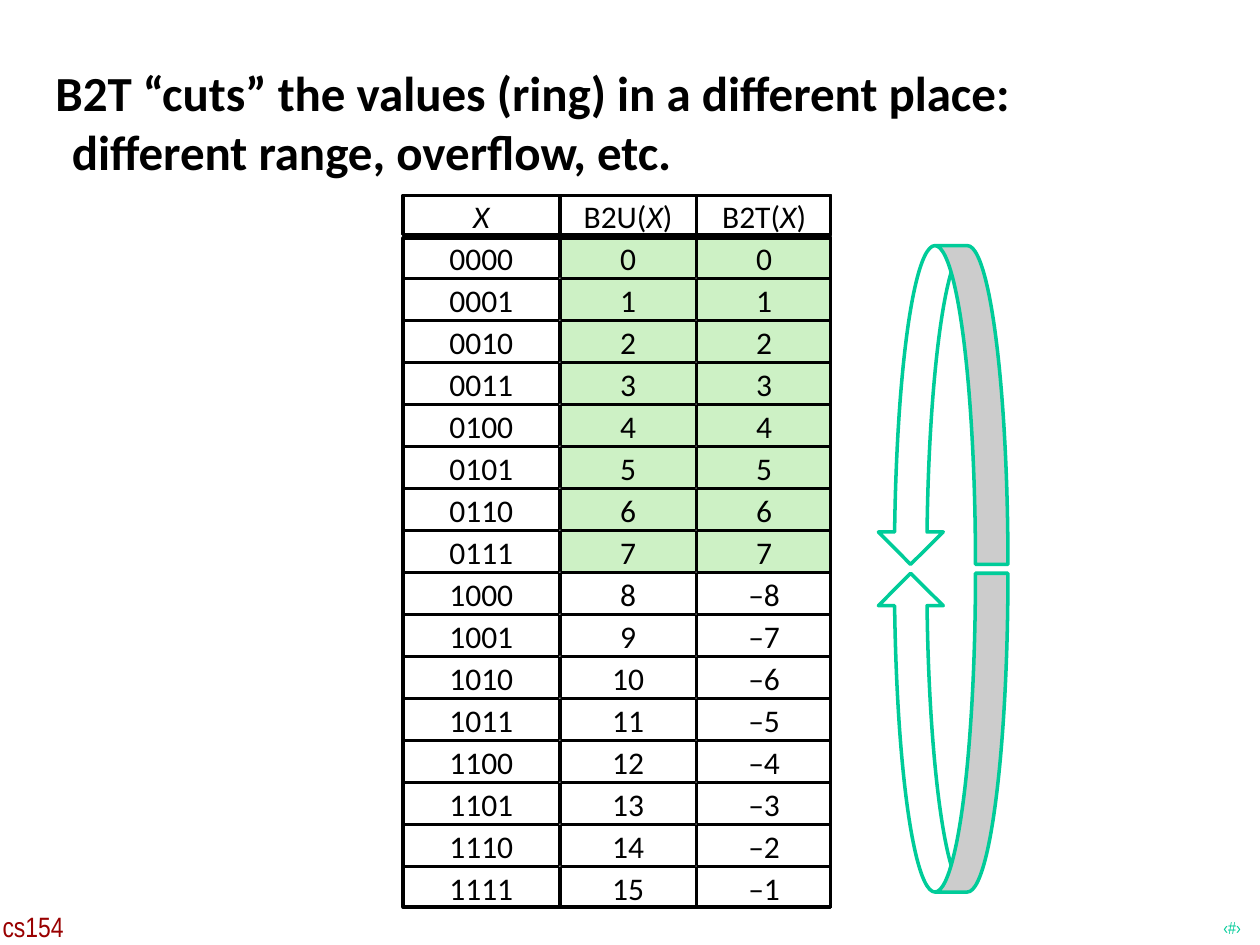
from pptx import Presentation
from pptx.dml.color import RGBColor
from pptx.enum.shapes import MSO_SHAPE
from pptx.enum.text import MSO_ANCHOR, PP_ALIGN
from pptx.util import Inches, Pt

ARROW = MSO_SHAPE.CURVED_UP_ARROW
RECT = MSO_SHAPE.RECTANGLE
MIDDLE = MSO_ANCHOR.MIDDLE
TOP = MSO_ANCHOR.TOP
CENTER = PP_ALIGN.CENTER

TITLE = "B2T “cuts” the values (ring) in a different place: different range, overflow, etc."
HEADS = ["X", "B2U(X)", "B2T(X)"]
BITS = 4
SIZE = 2 ** BITS
HALF = SIZE // 2

TEXTS = [
    ("‹#›", (9.66, 7.23, 0.25, 0.25), "Arial Narrow", 10, "00CC99", False, TOP),
    ("cs154", (-0.03, 7.17, 0.61, 0.37), "Arial Narrow", 16, "990000", False, TOP),
    (TITLE, (0.39, 0.12, 8.3, 1.69), "Calibri", 28, "000000", True, MIDDLE),
]
COLS = [(3.2, 1.24), (4.45, 1.07), (5.53, 1.07)]
START = 1.55
PITCH = 1 / 3
TALL = 0.32
FRAMES = [(3.2, 1.55, 3.39, 0.31), (3.2, 1.89, 3.39, 5.31)]
ARROWS = [(4.55, ("flipH",)), (1.95, ("flipH", "flipV"))]


def color(code):
    return RGBColor.from_string(code)


def style(font, name, size, code):
    font.name = name
    font.size = Pt(size)
    font.color.rgb = color(code)


def add_shape(shapes, kind, box, fill, line, width):
    shape = shapes.add_shape(kind, *map(Inches, box))
    shape.shadow.inherit = False
    if fill:
        shape.fill.solid()
        shape.fill.fore_color.rgb = color(fill)
    else:
        shape.fill.background()
    shape.line.color.rgb = color(line)
    shape.line.width = Pt(width)
    return shape


def add_text(slide, text, box, name, size, code, bold, anchor):
    frame = slide.shapes.add_textbox(*map(Inches, box)).text_frame
    frame.margin_left = frame.margin_right = Inches(0.05)
    frame.margin_top = frame.margin_bottom = Inches(0.05)
    frame.word_wrap = text == TITLE
    frame.vertical_anchor = anchor
    frame.text = text
    para = frame.paragraphs[0]
    if text == TITLE:
        props = para._p.get_or_add_pPr()
        props.set("marL", str(Inches(0.13)))
        props.set("indent", str(-Inches(0.13)))
    font = para.runs[0].font
    style(font, name, size, code)
    font.bold = bold


def add_cell(shapes, text, box, fill):
    frame = add_shape(shapes, RECT, box, fill, "000000", 1).text_frame
    frame.margin_left = frame.margin_right = Inches(0.1)
    frame.margin_top = frame.margin_bottom = Inches(0.05)
    frame.word_wrap = False
    frame.vertical_anchor = MIDDLE
    para = frame.paragraphs[0]
    para.alignment = CENTER
    for part in text.partition("X"):
        if part:
            run = para.add_run()
            run.text = part
            style(run.font, "Calibri", 18, "000000")
            run.font.italic = part == "X"


def add_grid(slide):
    shapes = slide.shapes.add_group_shape().shapes
    rows = [HEADS]
    for n in range(SIZE):
        signed = str(n) if n < HALF else f"–{SIZE - n}"
        rows.append([f"{n:0{BITS}b}", str(n), signed])
    for r, row in enumerate(rows):
        for c, (text, (left, wide)) in enumerate(zip(row, COLS)):
            green = c > 0 and 1 <= r <= HALF
            box = (left, START + r * PITCH, wide, TALL)
            add_cell(shapes, text, box, "CDF1C5" if green else "FFFFFF")
    for box in FRAMES:
        add_shape(shapes, RECT, box, None, "000000", 2)


def main():
    deck = Presentation()
    deck.slide_width = Inches(10)
    deck.slide_height = Inches(7.5)
    slide = deck.slides.add_slide(deck.slide_layouts[6])
    for item in TEXTS:
        add_text(slide, *item)
    add_grid(slide)
    for top, flips in ARROWS:
        box = (6.97, top, 1.03, 2.53)
        arrow = add_shape(slide.shapes, ARROW, box, "FFFFFF", "00CC99", 2)
        for flip in flips:
            arrow._element.spPr.xfrm.set(flip, "1")
    deck.save("out.pptx")


if __name__ == "__main__":
    main()
